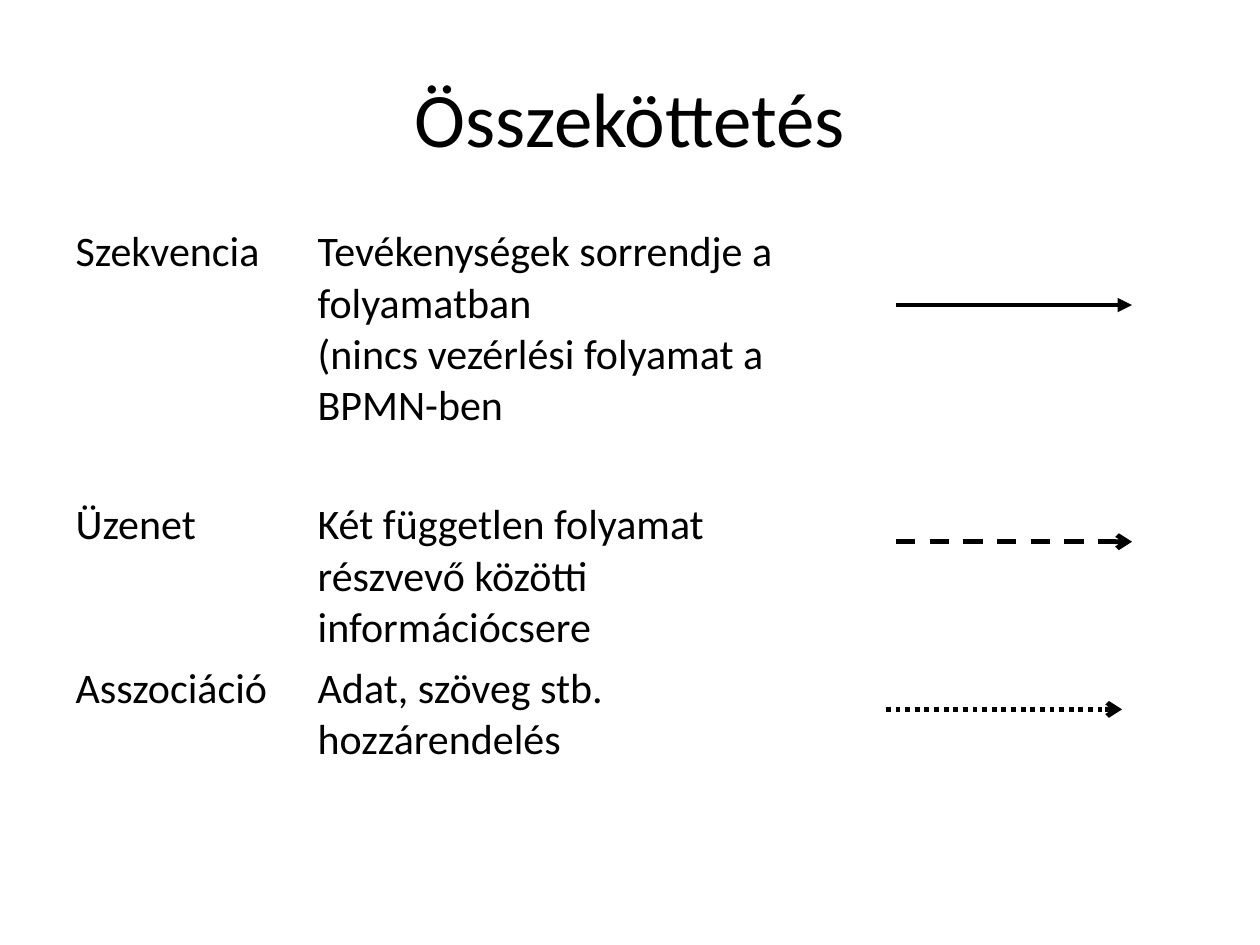
"""Builds the slide on BPMN connection types."""
from lxml import etree
from pptx import Presentation
from pptx.dml.color import RGBColor
from pptx.enum.dml import MSO_LINE
from pptx.enum.shapes import MSO_CONNECTOR
from pptx.enum.text import MSO_ANCHOR, PP_ALIGN
from pptx.oxml.ns import qn
from pptx.util import Cm, Pt

BLACK = RGBColor(0x00, 0x00, 0x00)


def write(tf, text, size=24, align=PP_ALIGN.LEFT, anchor=MSO_ANCHOR.TOP):
    tf.word_wrap = True
    tf.vertical_anchor = anchor
    for i, line in enumerate(text.split("\n")):
        p = tf.add_paragraph() if i else tf.paragraphs[0]
        p.alignment = align
        r = p.add_run()
        r.text = line
        r.font.name = "Calibri"
        r.font.size = Pt(size)
        r.font.color.rgb = BLACK


prs = Presentation()
prs.slide_width, prs.slide_height = Cm(25.4), Cm(19.05)
s = prs.slides.add_slide(prs.slide_layouts[6])

title = s.shapes.add_textbox(Cm(1.27), Cm(0.76), Cm(22.86), Cm(3.18))
write(title.text_frame, "Összeköttetés", size=44, align=PP_ALIGN.CENTER, anchor=MSO_ANCHOR.MIDDLE)

rows = [
    ("Szekvencia", "Tevékenységek sorrendje a folyamatban\n(nincs vezérlési folyamat a BPMN-ben", 5.5),
    ("Üzenet", "Két független folyamat részvevő közötti információcsere", 2.97),
    ("Asszociáció", "Adat, szöveg stb. hozzárendelés", 2.97),
]
frame = s.shapes.add_table(len(rows), 3, Cm(1.27), Cm(4.45), Cm(22.86), Cm(11.44))
table = frame.table
table.first_row = False
table.horz_banding = False
for col, width in zip(table.columns, (4.88, 10.36, 7.62)):
    col.width = Cm(width)
for row, (name, meaning, height) in zip(table.rows, rows):
    row.height = Cm(height)
    for cell, text in zip(row.cells, (name, meaning, "")):
        cell.fill.background()
        if text:
            write(cell.text_frame, text)

arrows = [
    (18.06, 6.15, MSO_LINE.SOLID, "triangle"),
    (18.06, 10.92, MSO_LINE.DASH, "arrow"),
    (17.86, 14.3, MSO_LINE.ROUND_DOT, "arrow"),
]
for x, y, dash, head in arrows:
    c = s.shapes.add_connector(MSO_CONNECTOR.STRAIGHT, Cm(x), Cm(y), Cm(x + 4.76), Cm(y))
    c.line.color.rgb = BLACK
    c.line.width = Pt(2.75)
    c.line.dash_style = dash
    etree.SubElement(c.line._get_or_add_ln(), qn("a:tailEnd"), type=head)
    etree.SubElement(c._element.spPr, qn("a:effectLst"))

prs.save("out.pptx")
